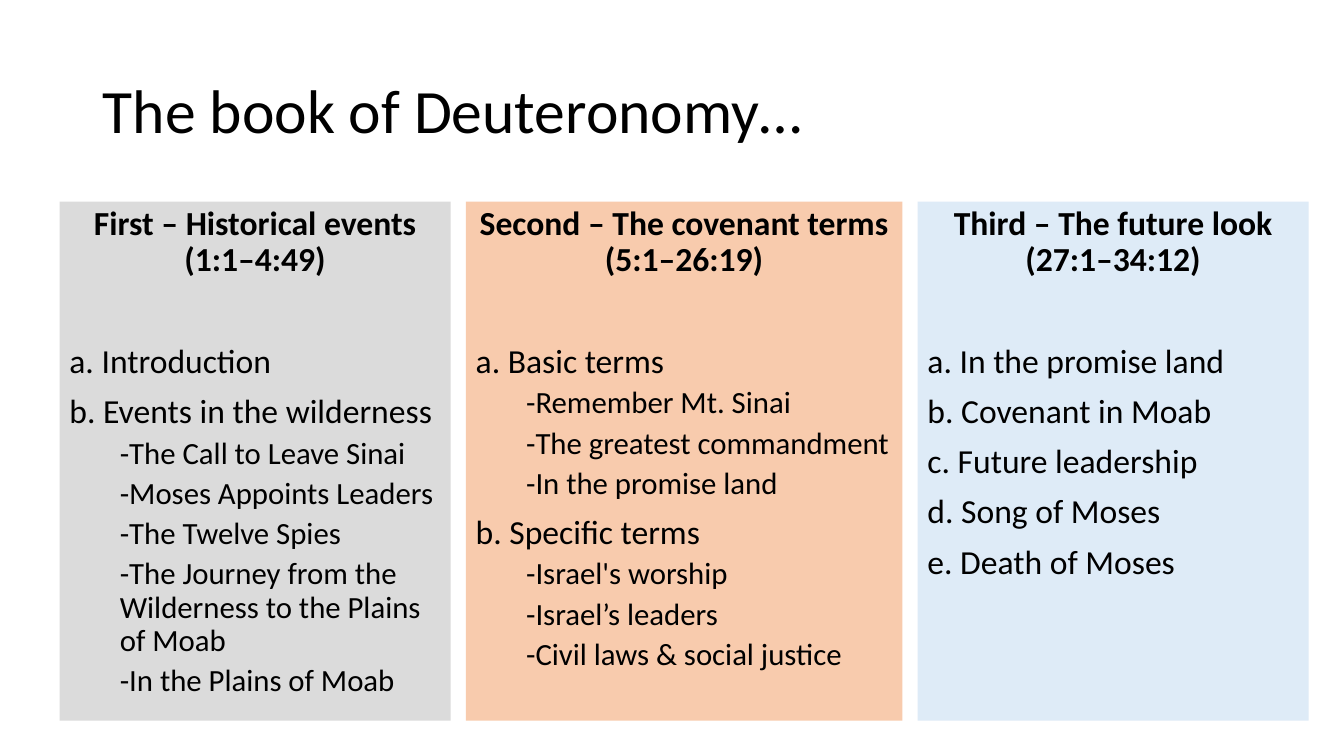
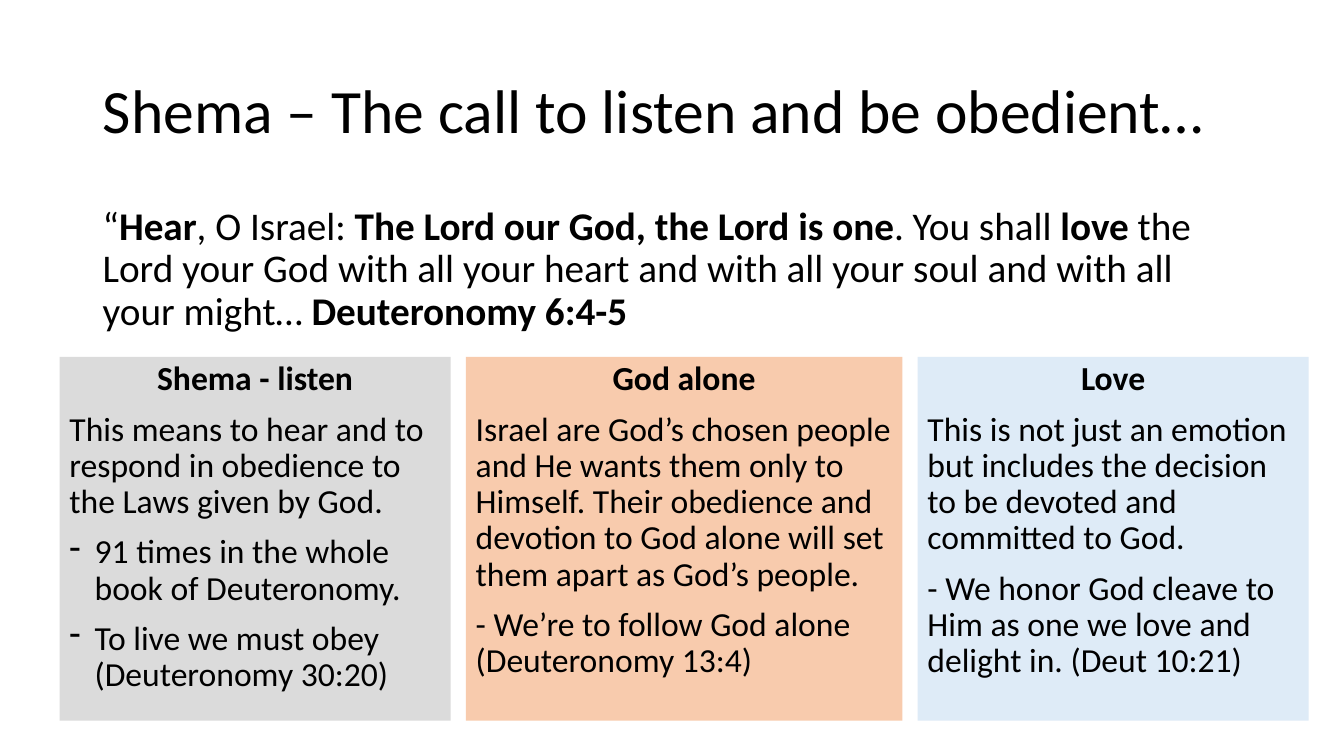
from pptx import Presentation
from pptx.dml.color import RGBColor
from pptx.enum.shapes import MSO_SHAPE
from pptx.enum.text import MSO_ANCHOR, MSO_AUTO_SIZE, PP_ALIGN
from pptx.oxml import parse_xml
from pptx.oxml.ns import nsdecls
from pptx.util import Inches, Pt

RECT = MSO_SHAPE.RECTANGLE
TOP, MIDDLE = MSO_ANCHOR.TOP, MSO_ANCHOR.MIDDLE
LEFT, CENTER = PP_ALIGN.LEFT, PP_ALIGN.CENTER
NO_FIT = MSO_AUTO_SIZE.NONE

FONT = "Calibri"
COLORS = {"text": "000000", "first": "DBDBDB", "second": "F8CBAD", "third": "DEEBF7"}
TITLE_BOX = (0.92, 0.4, 11.5, 1.45)
VERSE_BOX = (0.92, 2, 11.5, 1.55)
COLUMNS_LEFT, COLUMNS_BOTTOM, COLUMN_GAP = 0.59, 7.15, 0.15
COLUMNS = [("first", 3.88), ("second", 4.33), ("third", 3.88)]

# size, space before, alignment, level, left margin, first-line indent, bullet
STYLES = {
    "title": dict(size=44),
    "verse": dict(size=28),
    "head": dict(size=24, align=CENTER),
    "opening": dict(size=24, before=46.4),
    "item": dict(size=24, before=10),
    "sub": dict(size=22, before=5, level=1, margin=0.5),
    "dash": dict(size=24, before=10, margin=0.25, indent=-0.25, bullet="-"),
}

BOOK_COLUMNS = [
    [("head", "**First – Historical events (1:1–4:49)**"),
     ("opening", "a. Introduction"),
     ("item", "b. Events in the wilderness"),
     ("sub", "-The Call to Leave Sinai"),
     ("sub", "-Moses Appoints Leaders"),
     ("sub", "-The Twelve Spies"),
     ("sub", "-The Journey from the Wilderness to the Plains of Moab"),
     ("sub", "-In the Plains of Moab")],
    [("head", "**Second – The covenant terms (5:1–26:19)**"),
     ("opening", "a. Basic terms"),
     ("sub", "-Remember Mt. Sinai"),
     ("sub", "-The greatest commandment"),
     ("sub", "-In the promise land"),
     ("item", "b. Specific terms"),
     ("sub", "-Israel's worship"),
     ("sub", "-Israel’s leaders"),
     ("sub", "-Civil laws & social justice")],
    [("head", "**Third – The future look (27:1–34:12)**"),
     ("opening", "a. In the promise land"),
     ("item", "b. Covenant in Moab"),
     ("item", "c. Future leadership"),
     ("item", "d. Song of Moses"),
     ("item", "e. Death of Moses")],
]

VERSE = ("“**Hear**, O Israel: **The Lord our God, the Lord is one**. You shall **love** "
         "the Lord your God with all your heart and with all your soul and with all "
         "your might… **Deuteronomy 6:4-5**")

SHEMA_COLUMNS = [
    [("head", "**Shema - listen**"),
     ("item", "This means to hear and to respond in obedience to the Laws given by God."),
     ("dash", "91 times in the whole book of Deuteronomy."),
     ("dash", "To live we must obey (Deuteronomy 30:20)")],
    [("head", "**God alone**"),
     ("item", "Israel are God’s chosen people and He wants them only to Himself. Their "
              "obedience and devotion to God alone will set them apart as God’s people."),
     ("item", "- We’re to follow God alone (Deuteronomy 13:4)")],
    [("head", "**Love**"),
     ("item", "This is not just an emotion but includes the decision to be devoted "
              "and committed to God."),
     ("item", "- We honor God cleave to Him as one we love and delight in. (Deut 10:21)")],
]


def rgb(name):
    return RGBColor.from_string(COLORS[name])


def inches(box):
    return [Inches(v) for v in box]


def format_paragraph(p, size, before=0, align=LEFT, level=0, margin=0, indent=0, bullet=None):
    values = dict(alignment=align, level=level, line_spacing=0.9, space_before=Pt(before))
    for name, value in values.items():
        setattr(p, name, value)
    pPr = p._p.get_or_add_pPr()
    pPr.set("marL", str(Inches(margin)))
    pPr.set("indent", str(Inches(indent)))
    if bullet:
        pPr.append(parse_xml(f'<a:buChar {nsdecls("a")} char="{bullet}"/>'))
    for r in p.runs:
        r.font.size = Pt(size)


def write(tf, lines, anchor=TOP):
    """Fill a text frame with (style, text) lines; ** switches bold on and off."""
    values = dict(word_wrap=True, auto_size=NO_FIT, vertical_anchor=anchor)
    for name, value in values.items():
        setattr(tf, name, value)
    for i, (style, text) in enumerate(lines):
        p = tf.add_paragraph() if i else tf.paragraphs[0]
        for j, part in enumerate(text.split("**")):
            if part:
                r = p.add_run()
                r.text = part
                r.font.name = FONT
                r.font.bold = j % 2 == 1
                r.font.color.rgb = rgb("text")
        format_paragraph(p, **STYLES[style])


def add_titled_slide(prs, title):
    s = prs.slides.add_slide(prs.slide_layouts[5])
    sp = s.shapes.title
    sp.left, sp.top, sp.width, sp.height = inches(TITLE_BOX)
    write(sp.text_frame, [("title", title)], MIDDLE)
    return s


def add_column(s, box, color, lines):
    sp = s.shapes.add_shape(RECT, *inches(box))
    sp.shadow.inherit = False
    sp.fill.solid()
    sp.fill.fore_color.rgb = rgb(color)
    sp.line.fill.background()
    write(sp.text_frame, lines)


def add_columns(s, top, contents):
    left = COLUMNS_LEFT
    for (color, width), lines in zip(COLUMNS, contents):
        add_column(s, (left, top, width, COLUMNS_BOTTOM - top), color, lines)
        left += width + COLUMN_GAP


def add_verse(s, box, verse):
    sp = s.shapes.add_textbox(*inches(box))
    write(sp.text_frame, [("verse", verse)])


def build_book_slide(prs):
    s = add_titled_slide(prs, "The book of Deuteronomy…")
    add_columns(s, 2, BOOK_COLUMNS)


def build_shema_slide(prs):
    s = add_titled_slide(prs, "Shema – The call to listen and be obedient…")
    add_verse(s, VERSE_BOX, VERSE)
    add_columns(s, 3.54, SHEMA_COLUMNS)


def main():
    prs = Presentation()
    prs.slide_width, prs.slide_height = Inches(13.33), Inches(7.5)
    build_book_slide(prs)
    build_shema_slide(prs)
    prs.save("out.pptx")


if __name__ == "__main__":
    main()
